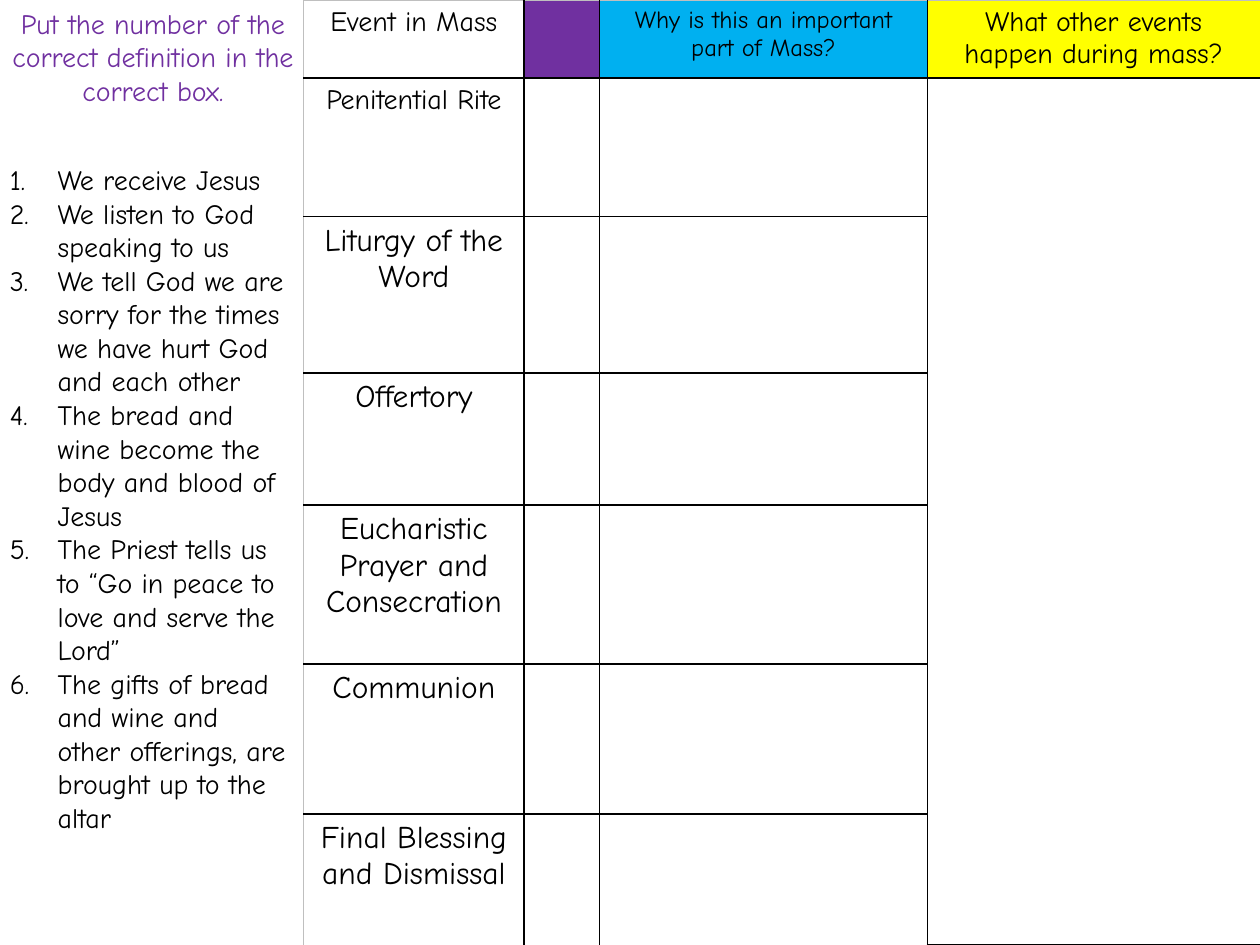
from dataclasses import dataclass

from lxml import etree
from pptx import Presentation
from pptx import util as u
from pptx.dml.color import RGBColor
from pptx.enum import text
from pptx.oxml import ns

FONT = "Comic Neue"
BLACK, PURPLE, BLUE, YELLOW = "000000", "7030A0", "00B0F0", "FFFF00"
EDGE = "BFBFBF"
COLUMNS = [1.75, 0.6, 2.6, 2.64]
ROWS = [0.62, 1.1, 1.24, 1.05, 1.26, 1.19, 1.04]


@dataclass
class Entry:
    row: int
    column: int
    words: str
    size: int = 18
    fill: str = ""


ENTRIES = [
    Entry(0, 0, "Event in Mass", 16),
    Entry(0, 1, "", 16, PURPLE),
    Entry(0, 2, "Why is this an important part of Mass?", 14, BLUE),
    Entry(0, 3, "What other events happen during mass?", 16, YELLOW),
    Entry(1, 0, "Penitential Rite", 16),
    Entry(2, 0, "Liturgy of the Word"),
    Entry(3, 0, "Offertory"),
    Entry(4, 0, "Eucharistic Prayer and Consecration"),
    Entry(5, 0, "Communion"),
    Entry(6, 0, "Final Blessing and Dismissal"),
]
DEFINITIONS = [
    "We receive Jesus",
    "We listen to God speaking to us",
    "We tell God we are sorry for the times we have hurt God and each other",
    "The bread and wine become the body and blood of Jesus",
    "The Priest tells us to “Go in peace to love and serve the Lord”",
    "The gifts of bread and wine and other offerings, are brought up to the altar",
]


def color(value: str) -> RGBColor:
    return RGBColor.from_string(value)


def write(para, words: str, size: int, ink: str = BLACK, centered: bool = True) -> None:
    para.text = words
    para.font.name = FONT
    para.font.size = u.Pt(size)
    para.font.color.rgb = color(ink)
    if centered:
        para.alignment = text.PP_ALIGN.CENTER


def number(para) -> None:
    properties = para._p.get_or_add_pPr()
    indent = u.Inches(0.38)
    properties.set("marL", str(indent))
    properties.set("indent", str(-indent))
    bullet = etree.SubElement(properties, ns.qn("a:buAutoNum"), type="arabicPeriod")
    properties.remove(bullet)
    properties.insert(0, bullet)


def add_box(page, left: float, top: float, width: float, height: float):
    box = page.shapes.add_textbox(*map(u.Inches, (left, top, width, height)))
    box.text_frame.word_wrap = True
    return box.text_frame


def set_borders(cell, row: int, column: int) -> None:
    outer = {
        "L": column == 0,
        "R": column == len(COLUMNS) - 1,
        "T": row == 0,
        "B": row == len(ROWS) - 1,
    }
    properties = cell._tc.get_or_add_tcPr()
    for side, is_outer in outer.items():
        width = u.Pt(0.25 if is_outer else 1)
        line = etree.SubElement(properties, ns.qn(f"a:ln{side}"), w=str(width))
        solid = etree.SubElement(line, ns.qn("a:solidFill"))
        etree.SubElement(solid, ns.qn("a:srgbClr"), val=EDGE if is_outer else BLACK)


def add_mass_table(page) -> None:
    size = (2.41, 0, sum(COLUMNS), sum(ROWS))
    table = page.shapes.add_table(len(ROWS), len(COLUMNS), *map(u.Inches, size)).table
    table.first_row = table.horz_banding = False
    for column, width in zip(table.columns, COLUMNS):
        column.width = u.Inches(width)
    for row, height in zip(table.rows, ROWS):
        row.height = u.Inches(height)
    for row in range(len(ROWS)):
        for column in range(len(COLUMNS)):
            cell = table.cell(row, column)
            set_borders(cell, row, column)
            cell.fill.background()
    for entry in ENTRIES:
        cell = table.cell(entry.row, entry.column)
        write(cell.text_frame.paragraphs[0], entry.words, entry.size)
        if entry.fill:
            cell.fill.solid()
            cell.fill.fore_color.rgb = color(entry.fill)
    last = len(COLUMNS) - 1
    table.cell(1, last).merge(table.cell(len(ROWS) - 1, last))


def add_definitions(page) -> None:
    frame = add_box(page, -0.02, 1.24, 2.4, 6.29)
    for index, words in enumerate(DEFINITIONS):
        para = frame.add_paragraph() if index else frame.paragraphs[0]
        write(para, words, 16, centered=False)
        number(para)


def main() -> None:
    deck = Presentation()
    deck.slide_width, deck.slide_height = u.Inches(10), u.Inches(7.5)
    page = deck.slides.add_slide(deck.slide_layouts[6])
    add_mass_table(page)
    add_definitions(page)
    instruction = add_box(page, 0, 0, 2.43, 1.18)
    write(
        instruction.paragraphs[0],
        "Put the number of the correct definition in the correct box.",
        16,
        PURPLE,
    )
    deck.save("out.pptx")


if __name__ == "__main__":
    main()
